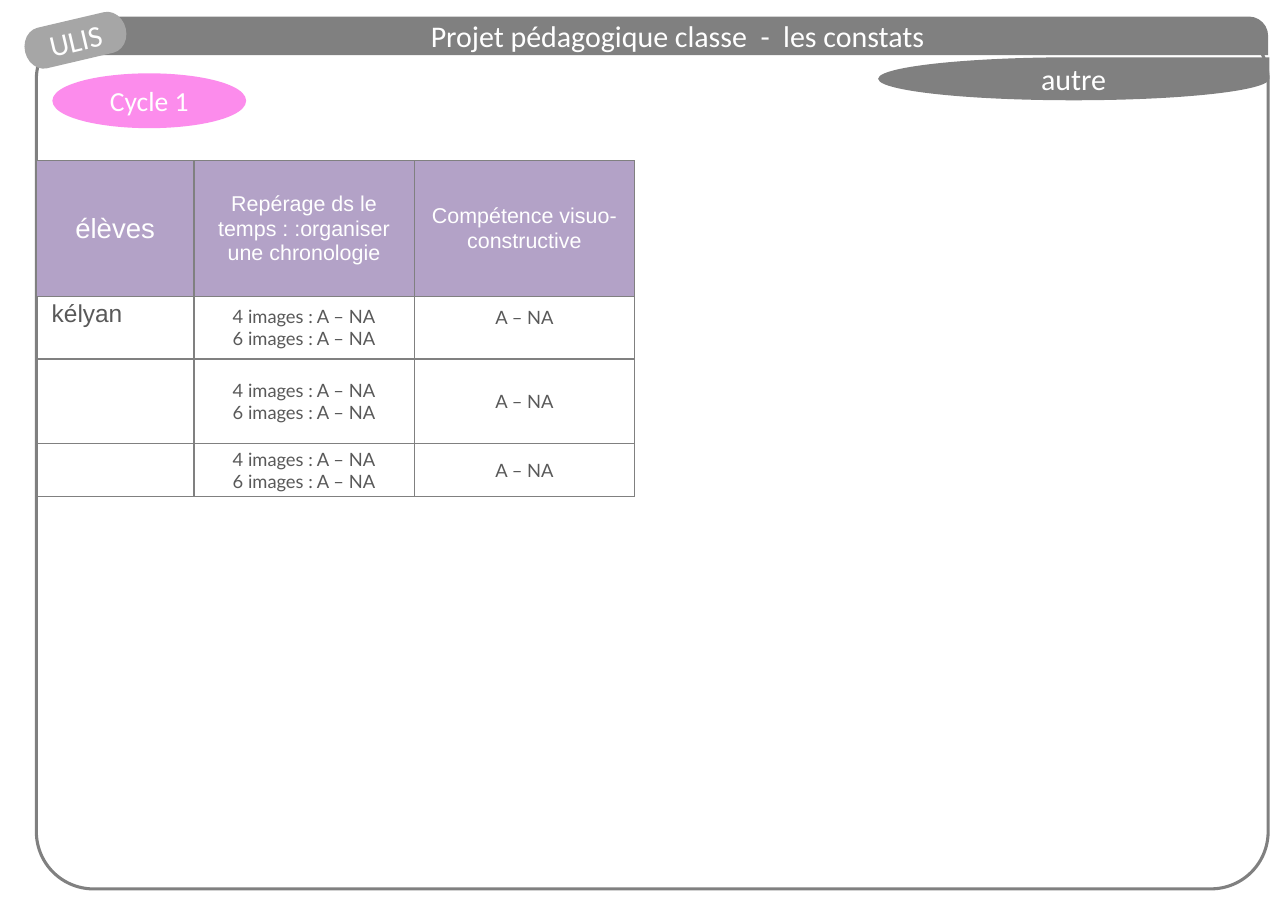
from dataclasses import dataclass

from lxml.etree import SubElement
from pptx import Presentation
from pptx.dml.color import RGBColor
from pptx.enum.shapes import MSO_SHAPE
from pptx.enum.text import MSO_ANCHOR, MSO_AUTO_SIZE, PP_ALIGN
from pptx.oxml.ns import qn
from pptx.util import Inches, Pt


@dataclass(frozen=True)
class Theme:
    gray: str = "808080"
    light_gray: str = "A6A6A6"
    pink: str = "FC8CEC"
    lilac: str = "B3A2C7"
    white: str = "FFFFFF"
    ink: str = "595959"
    title: float = 19.6
    badge: float = 18
    heading: float = 14
    pupil: float = 16
    body: float = 12


THEME = Theme()
HEADERS = [
    ("élèves", THEME.badge),
    ("Repérage ds le temps : :organiser une chronologie", THEME.heading),
    ("Compétence visuo-constructive", THEME.heading),
]
PUPILS = ["kélyan", "", ""]
CHRONOLOGY = ["4 images : A – NA", "6 images : A – NA"]
VISUAL = ["A – NA"]
COLUMN_WIDTHS = [1.43, 2, 2]
ROW_HEIGHTS = [1.23, 0.57, 0.77, 0.48]


def rgb(value):
    return RGBColor.from_string(value)


def write(tf, lines, size, font="Calibri", color=THEME.white, align=PP_ALIGN.CENTER):
    for i, line in enumerate(lines):
        p = tf.add_paragraph() if i else tf.paragraphs[0]
        p.alignment = align
        r = p.add_run()
        r.text = line
        r.font.name = font
        r.font.size = Pt(size)
        r.font.color.rgb = rgb(color)


def set_frame(tf):
    tf.word_wrap = True
    tf.auto_size = MSO_AUTO_SIZE.NONE
    tf.vertical_anchor = MSO_ANCHOR.MIDDLE
    tf.margin_left = tf.margin_right = tf.margin_top = tf.margin_bottom = 0


def add_panel(s, kind, box, fill=None, line=None, text=None, size=THEME.title):
    sp = s.shapes.add_shape(kind, *map(Inches, box))
    sp.shadow.inherit = False
    if fill:
        sp.fill.solid()
        sp.fill.fore_color.rgb = rgb(fill)
    else:
        sp.fill.background()
    if line:
        sp.line.color.rgb = rgb(line)
        sp.line.width = Pt(2)
    else:
        sp.line.fill.background()
    if text:
        set_frame(sp.text_frame)
        write(sp.text_frame, [text], size)
    return sp


def place_title(s, box, text):
    sp = s.shapes.title
    sp.left, sp.top, sp.width, sp.height = map(Inches, box)
    set_frame(sp.text_frame)
    write(sp.text_frame, [text], THEME.title)
    # Bring the title in front of its bar
    s.shapes._spTree.append(sp._element)


def format_cell(cell, fill=None):
    tcPr = cell._tc.get_or_add_tcPr()
    for side in ("lnL", "lnR", "lnT", "lnB"):
        ln = SubElement(tcPr, qn(f"a:{side}"), w=str(Pt(1)))
        solid = SubElement(ln, qn("a:solidFill"))
        SubElement(solid, qn("a:srgbClr"), val=THEME.gray)
    if fill:
        cell.fill.solid()
        cell.fill.fore_color.rgb = rgb(fill)
    else:
        cell.fill.background()
    cell.vertical_anchor = MSO_ANCHOR.MIDDLE
    cell.margin_left = cell.margin_right = Inches(0.14)
    cell.margin_top = cell.margin_bottom = Inches(0.04)


def add_skills_table(s, left, top):
    frame = s.shapes.add_table(
        len(ROW_HEIGHTS), len(COLUMN_WIDTHS), Inches(left), Inches(top),
        Inches(sum(COLUMN_WIDTHS)), Inches(sum(ROW_HEIGHTS)))
    table = frame.table
    table.first_row = table.horz_banding = False
    for column, width in zip(table.columns, COLUMN_WIDTHS):
        column.width = Inches(width)
    for row, height in zip(table.rows, ROW_HEIGHTS):
        row.height = Inches(height)

    # Header row
    for col, (text, size) in enumerate(HEADERS):
        cell = table.cell(0, col)
        format_cell(cell, THEME.lilac)
        write(cell.text_frame, [text], size, "Arial")

    # One row per pupil
    for row, pupil in enumerate(PUPILS, 1):
        name, *skills = (table.cell(row, col) for col in range(3))
        format_cell(name)
        if pupil:
            write(name.text_frame, [pupil], THEME.pupil, "Arial", THEME.ink, PP_ALIGN.LEFT)
        for cell, lines in zip(skills, (CHRONOLOGY, VISUAL)):
            format_cell(cell)
            write(cell.text_frame, lines, THEME.body, "Lato", THEME.ink)

    # The first pupil's name and visual skill sit at the top of the row
    for col, margin in ((0, 0.04), (2, 0.09)):
        cell = table.cell(1, col)
        cell.vertical_anchor = MSO_ANCHOR.TOP
        cell.margin_top = Inches(margin)


def main():
    prs = Presentation()
    prs.slide_width, prs.slide_height = Inches(11.69), Inches(8.27)
    s = prs.slides.add_slide(prs.slide_layouts[5])

    # Page frame and subject tab
    page = add_panel(s, MSO_SHAPE.ROUNDED_RECTANGLE, (0.33, 0.2, 11.18, 7.87), line=THEME.gray)
    page.adjustments[0] = 0.066
    add_panel(s, MSO_SHAPE.TEAR, (7.97, 0.52, 3.55, 0.39), THEME.gray, text="autre")

    # Title bar and class badge
    bar = add_panel(s, MSO_SHAPE.ROUND_1_RECTANGLE, (0.84, 0.15, 10.67, 0.35), THEME.gray)
    bar.adjustments[0] = 0.5
    place_title(s, (0.84, 0.15, 10.62, 0.35), "Projet pédagogique classe  -  les constats")
    badge = add_panel(s, MSO_SHAPE.FLOWCHART_TERMINATOR, (0.23, 0.19, 0.91, 0.35),
                      THEME.light_gray, THEME.light_gray, "ULIS")
    badge.rotation = 346.8

    # Skills table and cycle label
    add_skills_table(s, 0.33, 1.46)
    add_panel(s, MSO_SHAPE.OVAL, (0.49, 0.68, 1.73, 0.47), THEME.pink, THEME.pink,
              "Cycle 1", THEME.badge)

    prs.save("out.pptx")


if __name__ == "__main__":
    main()
